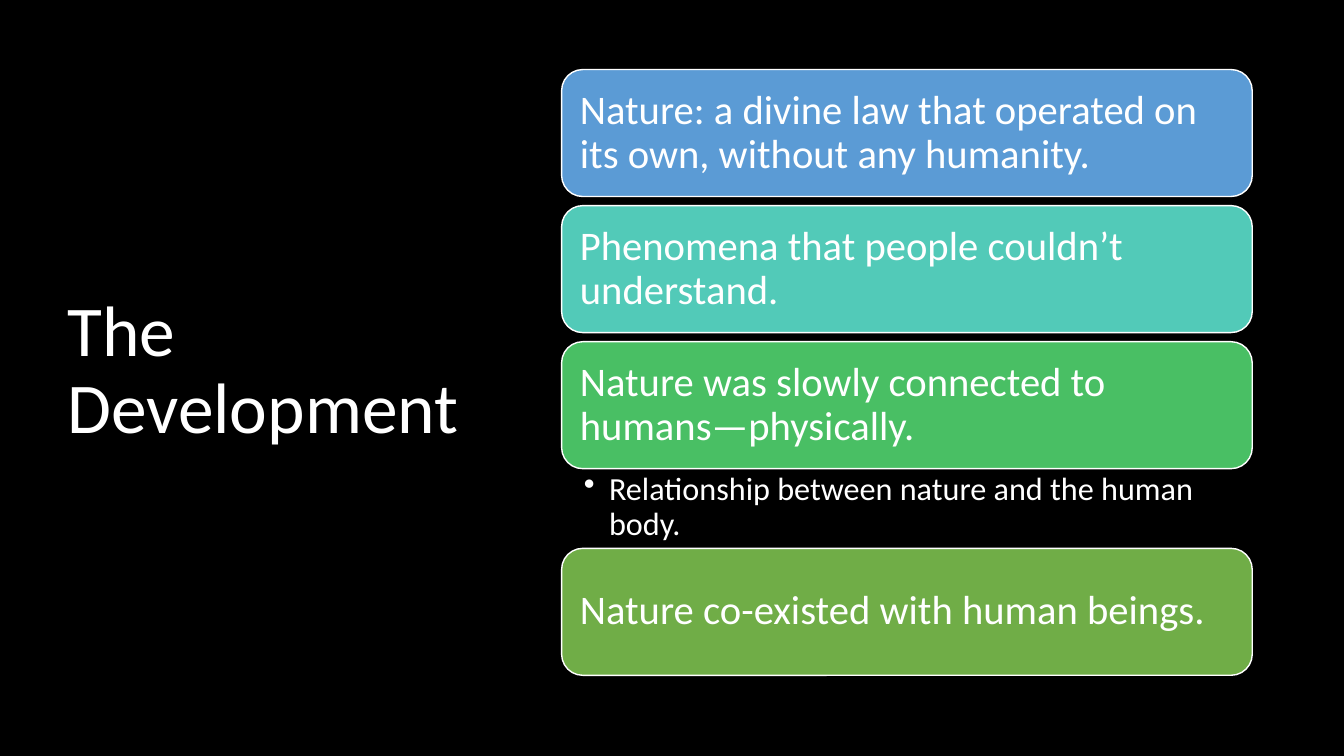
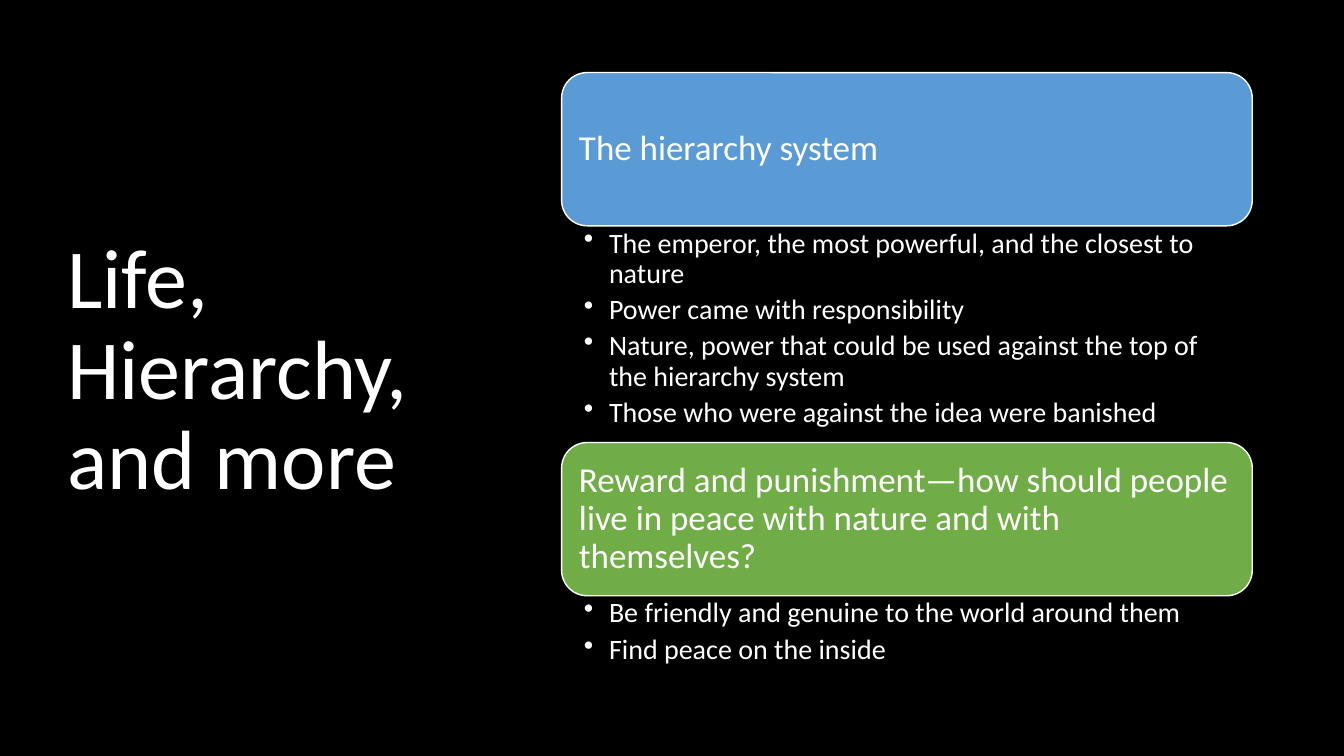
from pptx import Presentation
from pptx import util as u
from pptx.dml.color import RGBColor
from pptx.enum import shapes, text
from pptx.oxml import parse_xml
from pptx.oxml.ns import nsdecls

# Content: each section is (fill colour, heading, bullets)
SLIDES = [
    {
        "title": "The Development", "title_size": 51,
        "top": 0.69, "box_height": 1.26, "gap": 0.09,
        "box_size": 29, "box_inset": 0.12,
        "bullet_size": 23, "bullet_insets": (0.22, 0.04, 0.23, 0.04),
        "sections": [
            ("blue", "Nature: a divine law that operated on its own, without any humanity.", []),
            ("teal", "Phenomena that people couldn’t understand.", []),
            ("emerald", "Nature was slowly connected to humans—physically.",
             ["Relationship between nature and the human body."]),
            ("green", "Nature co-existed with human beings.", []),
        ],
        "bullet_heights": [0, 0, 0.79, 0],
    },
    {
        "title": "Life, Hierarchy, and more", "title_size": 60,
        "top": 0.72, "box_height": 1.52, "gap": 0,
        "box_size": 25, "box_inset": 0.1,
        "bullet_size": 20, "bullet_insets": (0.22, 0.03, 0.19, 0.03),
        "sections": [
            ("blue", "The hierarchy system",
             ["The emperor, the most powerful, and the closest to nature",
              "Power came with responsibility",
              "Nature, power that could be used against the top of the hierarchy system",
              "Those who were against the idea were banished"]),
            ("green", "Reward and punishment—how should people live in peace "
             "with nature and with themselves?",
             ["Be friendly and genuine to the world around them",
              "Find peace on the inside"]),
        ],
        "bullet_heights": [2.15, 0.75],
    },
]

# Shared style
COLOURS = {"black": "000000", "white": "FFFFFF", "blue": "5B9BD5",
           "teal": "52CAB8", "emerald": "49BF64", "green": "70AD47"}
FONT = "Calibri"
TITLE_AREA = (0.57, 0.68, 4.16, 6.02)
TITLE_INSETS = (0.1, 0.05, 0.1, 0.05)
COLUMN_LEFT, COLUMN_WIDTH = 5.57, 6.85
BULLET_INDENT = u.Inches(0.25)
BULLET_SPACING = 4.3


def colour(name):
    return RGBColor.from_string(COLOURS[name])


def write(shape, lines, size, insets, anchor, bullets=False):
    frame = shape.text_frame
    left, top, right, bottom = (u.Inches(inset) for inset in insets)
    settings = {"word_wrap": True, "vertical_anchor": anchor,
                "margin_left": left, "margin_top": top,
                "margin_right": right, "margin_bottom": bottom}
    for name, value in settings.items():
        setattr(frame, name, value)
    for index, line in enumerate(lines):
        paragraph = frame.paragraphs[0] if index == 0 else frame.add_paragraph()
        paragraph.alignment = text.PP_ALIGN.LEFT
        paragraph.line_spacing = 0.9
        run = paragraph.add_run()
        run.text = line
        for name, value in {"name": FONT, "size": u.Pt(size)}.items():
            setattr(run.font, name, value)
        run.font.color.rgb = colour("white")
        if bullets:
            paragraph.space_after = u.Pt(BULLET_SPACING)
            properties = paragraph._p.get_or_add_pPr()
            properties.set("marL", str(BULLET_INDENT))
            properties.set("indent", str(-BULLET_INDENT))
            properties.append(parse_xml(f'<a:buChar {nsdecls("a")} char="•"/>'))


def add_text(slide, area, *style, **options):
    box = slide.shapes.add_textbox(*(u.Inches(length) for length in area))
    write(box, *style, **options)


def add_heading(slide, area, fill, heading, size, inset):
    box = slide.shapes.add_shape(shapes.MSO_SHAPE.ROUNDED_RECTANGLE,
                                 *(u.Inches(length) for length in area))
    box.shadow.inherit = False
    box.fill.solid()
    box.fill.fore_color.rgb = colour(fill)
    box.line.color.rgb = colour("white")
    box.line.width = u.Pt(1)
    write(box, [heading], size, [inset] * 4, text.MSO_ANCHOR.MIDDLE)


def build_slide(presentation, content):
    slide = presentation.slides.add_slide(presentation.slide_layouts[6])
    add_text(slide, TITLE_AREA, [content["title"]], content["title_size"],
             TITLE_INSETS, text.MSO_ANCHOR.MIDDLE)

    # Stack headings; bullets sit directly between two boxes
    top = content["top"]
    for (fill, heading, bullets), bullet_height in zip(
            content["sections"], content["bullet_heights"]):
        add_heading(slide, (COLUMN_LEFT, top, COLUMN_WIDTH, content["box_height"]),
                    fill, heading, content["box_size"], content["box_inset"])
        top += content["box_height"]
        if bullets:
            add_text(slide, (COLUMN_LEFT, top, COLUMN_WIDTH, bullet_height),
                     bullets, content["bullet_size"], content["bullet_insets"],
                     text.MSO_ANCHOR.TOP, bullets=True)
        top += bullet_height or content["gap"]


def main():
    presentation = Presentation()
    presentation.slide_width = u.Inches(13.33)
    presentation.slide_height = u.Inches(7.5)
    background = presentation.slide_master.background.fill
    background.solid()
    background.fore_color.rgb = colour("black")
    for content in SLIDES:
        build_slide(presentation, content)
    presentation.save("out.pptx")


if __name__ == "__main__":
    main()
